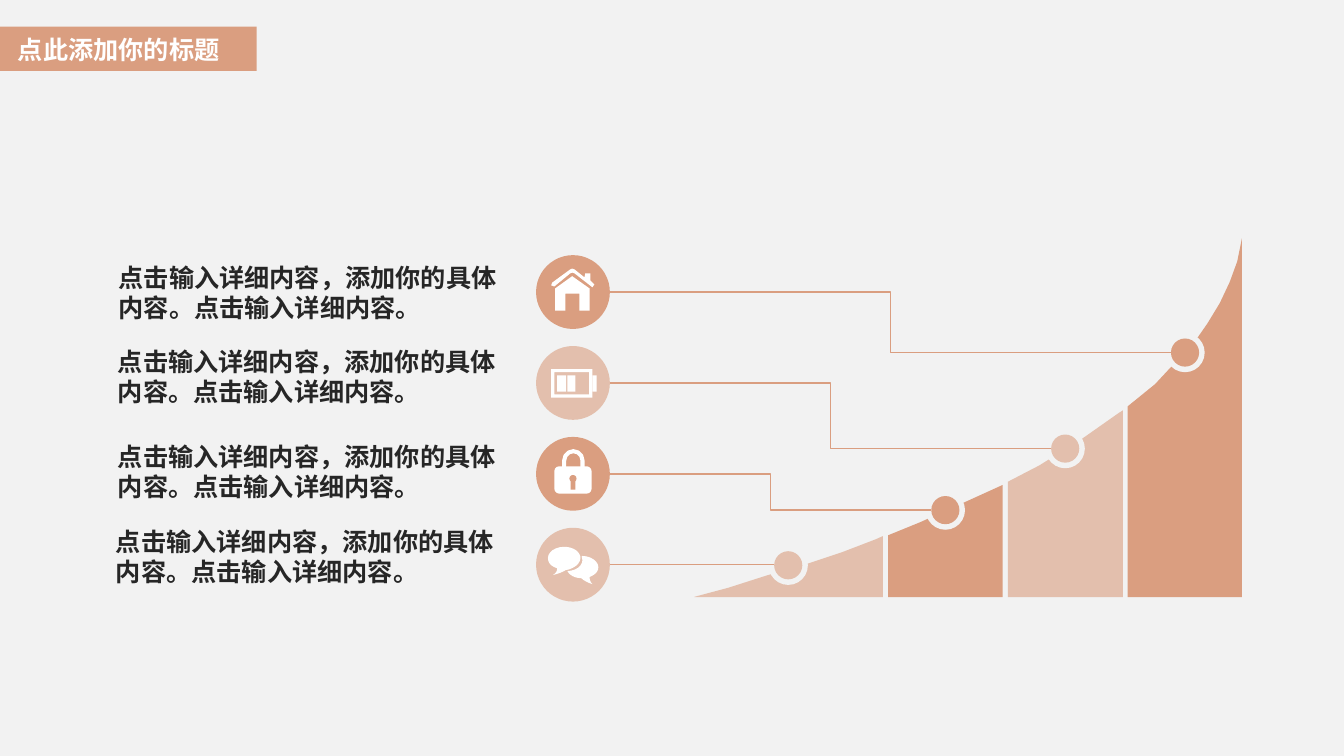
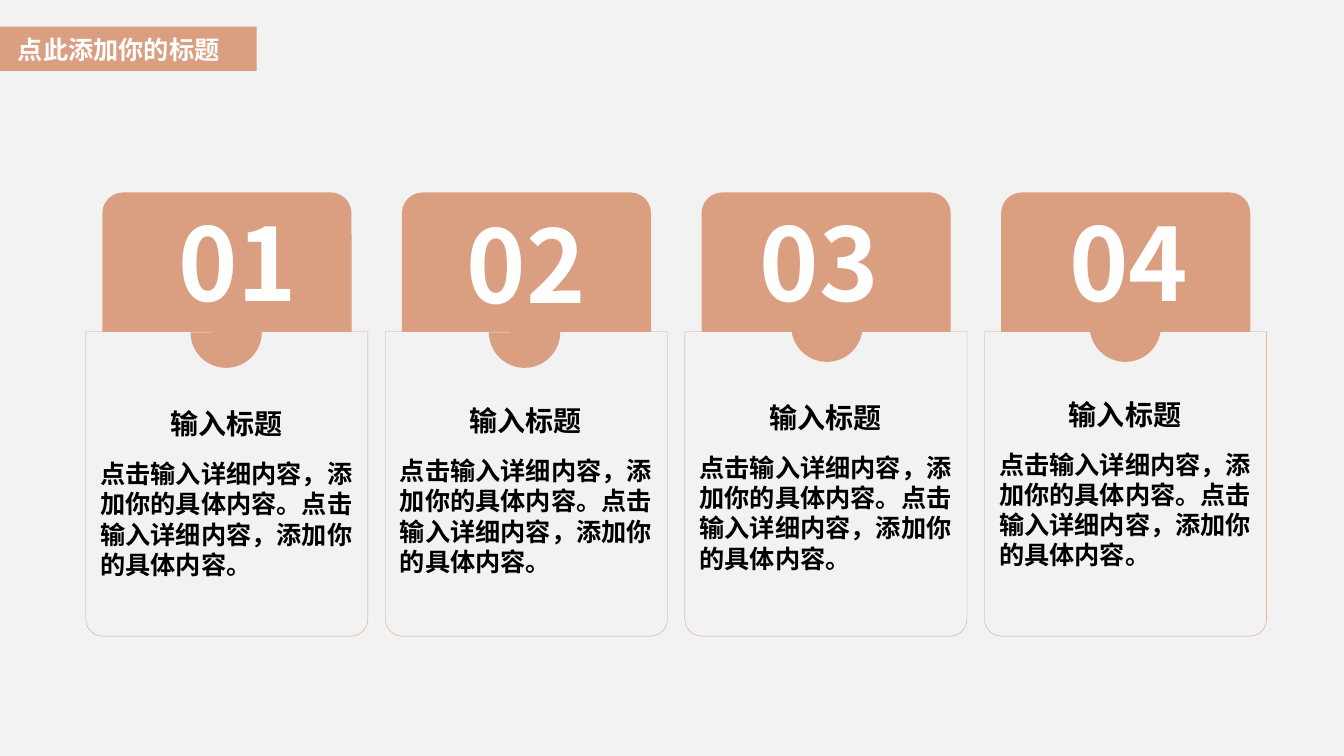
import pptx
import pptx.util
import pptx.dml.color
import pptx.enum.shapes
import pptx.enum.text
import pptx.oxml
import pptx.oxml.ns
from pptx.util import Cm

RGBColor = pptx.dml.color.RGBColor
SHAPE = pptx.enum.shapes.MSO_SHAPE
CONNECTOR = pptx.enum.shapes.MSO_CONNECTOR
ALIGN = pptx.enum.text.PP_ALIGN

CLAY = RGBColor(0xDA, 0x9E, 0x80)
PAPER = RGBColor(0xF2, 0xF2, 0xF2)
WHITE = RGBColor(0xFF, 0xFF, 0xFF)
INK = RGBColor(0x26, 0x26, 0x26)
BLACK = RGBColor(0, 0, 0)
FONT = "Noto Sans CJK JP"
PALE_ALPHA = 60

TITLE = "点此添加你的标题"
STEP_TEXT = "点击输入详细内容，添加你的具体内容。点击输入详细内容。"
CARD_TITLE = "输入标题"
CARD_TEXT = "点击输入详细内容，添加你的具体内容。点击输入详细内容，添加你的具体内容。"

DISC_LEFT, DISC_TOP, DISC_SIZE, DISC_PITCH = 13.51, 6.43, 1.86, 2.29
MARKER_SIZE, HALO_GAP = 0.71, 0.14
GROWTH_BASE = 15.05
GROWTH_BANDS = [
    ([(17.5, 15.04), (18.36, 14.81), (19.33, 14.5), (20.37, 14.2),
      (21.21, 13.92), (22.07, 13.59), (22.25, 13.51)], PALE_ALPHA),
    ([(22.38, 13.49), (23.19, 13.16), (24.28, 12.67), (25.27, 12.22)], 100),
    ([(25.4, 12.14), (26.19, 11.73), (27.28, 11.05), (28.19, 10.41),
      (28.3, 10.34)], PALE_ALPHA),
    ([(28.42, 10.24), (29.11, 9.68), (29.51, 9.25), (30.18, 8.51),
      (30.43, 8.15), (30.74, 7.64), (30.99, 7.11), (31.18, 6.59),
      (31.3, 6)], 100),
]

ROOF = [(0.41, 0.69), (0.86, 0.36), (0.91, 0.34), (0.97, 0.36), (1.22, 0.56),
        (1.24, 0.46), (1.37, 0.46), (1.37, 0.64), (1.47, 0.74), (1.42, 0.81),
        (0.97, 0.46), (0.91, 0.44), (0.86, 0.46), (0.46, 0.79), (0.38, 0.76)]
WALLS = [(0.91, 0.53), (1.35, 0.84), (1.35, 1.4), (1.09, 1.4), (1.09, 0.97),
         (0.74, 0.97), (0.74, 1.4), (0.48, 1.4), (0.48, 0.84)]
BACK_BUBBLE = [
    (1.57, 0.99), (1.57, 0.84), (1.37, 0.71), (1.17, 0.71),
    (1.14, 0.71), (1.15, 0.75), (1.17, 0.81),
    (1.17, 0.97), (0.99, 1.09), (0.79, 1.09),
    (0.84, 1.19), (0.97, 1.27), (1.14, 1.27),
    (1.24, 1.37), (1.42, 1.42), (1.42, 1.42),
    (1.35, 1.35), (1.35, 1.27), (1.35, 1.24),
    (1.47, 1.19), (1.57, 1.12), (1.57, 0.99)]
FRONT_BUBBLE = [
    (1.09, 0.66), (1.04, 0.56), (0.89, 0.48), (0.71, 0.48),
    (0.48, 0.48), (0.3, 0.61), (0.3, 0.76),
    (0.3, 0.89), (0.38, 0.97), (0.53, 1.02),
    (0.53, 1.07), (0.53, 1.12), (0.43, 1.19),
    (0.43, 1.19), (0.64, 1.14), (0.74, 1.07),
    (0.94, 1.04), (1.12, 0.91), (1.12, 0.76),
    (1.12, 0.74), (1.12, 0.71), (1.09, 0.66)]


def paint(shape, fill, alpha=100, line=None, line_width=0.25):
    shape.shadow.inherit = False
    if fill is None:
        shape.fill.background()
    else:
        shape.fill.solid()
        shape.fill.fore_color.rgb = fill
        if alpha < 100:
            color = shape.fill._xPr.find(".//" + pptx.oxml.ns.qn("a:srgbClr"))
            opacity = pptx.oxml.parse_xml(
                "<a:alpha %s val='%d'/>" % (pptx.oxml.ns.nsdecls("a"), alpha * 1000))
            color.append(opacity)
    if line is None:
        shape.line.fill.background()
    else:
        shape.line.color.rgb = line
        shape.line.width = pptx.util.Pt(line_width)
    return shape


def add_preset(slide, preset, left, top, width, height, fill, adjust=(), **style):
    shape = slide.shapes.add_shape(preset, Cm(left), Cm(top), Cm(width), Cm(height))
    for index, value in enumerate(adjust):
        shape.adjustments[index] = value
    return paint(shape, fill, **style)


def add_outline(slide, points, fill, left=0, top=0, alpha=100):
    corners = [(Cm(left + x), Cm(top + y)) for x, y in points]
    builder = slide.shapes.build_freeform(*corners[0], scale=1.0)
    builder.add_line_segments(corners[1:], close=True)
    return paint(builder.convert_to_shape(), fill, alpha)


def smooth_curve(controls, steps=6):
    points = [controls[0]]
    for first in range(0, len(controls) - 1, 3):
        for step in range(1, steps + 1):
            t = step / steps
            weights = ((1 - t) ** 3, 3 * t * (1 - t) ** 2, 3 * t * t * (1 - t), t ** 3)
            points.append(tuple(
                sum(w * p[axis] for w, p in zip(weights, controls[first:first + 4]))
                for axis in (0, 1)))
    return points


def add_text(slide, text, left, top, width, height, size=18, color=BLACK,
             align=ALIGN.LEFT):
    box = slide.shapes.add_textbox(Cm(left), Cm(top), Cm(width), Cm(height))
    frame = box.text_frame
    frame.word_wrap = True
    frame.auto_size = pptx.enum.text.MSO_AUTO_SIZE.SHAPE_TO_FIT_TEXT
    paragraph = frame.paragraphs[0]
    paragraph.alignment = align
    run = paragraph.add_run()
    run.text = text
    run.font.size = pptx.util.Pt(size)
    run.font.bold = True
    run.font.name = FONT
    run.font.color.rgb = color
    east_asian = pptx.oxml.parse_xml(
        "<a:ea %s typeface='%s'/>" % (pptx.oxml.ns.nsdecls("a"), FONT))
    run.font._element.append(east_asian)


def add_leader(slide, kind, start_x, start_y, end_x, end_y):
    leader = slide.shapes.add_connector(
        kind, Cm(start_x), Cm(start_y), Cm(end_x), Cm(end_y))
    leader.line.color.rgb = CLAY
    leader.line.width = pptx.util.Pt(1)
    leader._element.spPr.append(
        pptx.oxml.parse_xml("<a:effectLst %s/>" % pptx.oxml.ns.nsdecls("a")))


def draw_house(slide, left, top):
    for part in (WALLS, ROOF):
        add_outline(slide, part, WHITE, left, top)


def draw_battery(slide, left, top):
    add_preset(slide, SHAPE.FRAME, left + 0.38, top + 0.58, 1.04, 0.72, WHITE, [0.11])
    for offset, width in ((0.53, 0.23), (0.79, 0.2), (1.42, 0.11)):
        add_preset(slide, SHAPE.RECTANGLE, left + offset, top + 0.74, width, 0.41, WHITE)


def draw_lock(slide, left, top):
    add_preset(slide, SHAPE.ROUNDED_RECTANGLE, left + 0.71, top + 0.36, 0.46, 0.7,
               None, [0.5], line=WHITE, line_width=2.9)
    add_preset(slide, SHAPE.ROUNDED_RECTANGLE, left + 0.46, top + 0.74, 0.94, 0.69,
               WHITE, [0.18])
    add_preset(slide, SHAPE.OVAL, left + 0.84, top + 0.96, 0.18, 0.18, CLAY)
    add_preset(slide, SHAPE.RECTANGLE, left + 0.87, top + 1.05, 0.12, 0.28, CLAY)


def draw_chat(slide, left, top):
    for bubble in (BACK_BUBBLE, FRONT_BUBBLE):
        add_outline(slide, smooth_curve(bubble), WHITE, left, top)


def new_slide(deck):
    slide = deck.slides.add_slide(deck.slide_layouts[6])
    slide.background.fill.solid()
    slide.background.fill.fore_color.rgb = PAPER
    add_preset(slide, SHAPE.RECTANGLE, 0, 0.67, 6.47, 1.12, CLAY)
    add_text(slide, TITLE, 0.2, 0.74, 6.05, 1.03, color=WHITE, align=ALIGN.JUSTIFY)
    return slide


def add_step(slide, index, draw_icon, alpha, marker, text_at):
    disc_top = DISC_TOP + index * DISC_PITCH
    disc_middle = disc_top + DISC_SIZE / 2
    marker_left, marker_top = marker
    halo_size = MARKER_SIZE + 2 * HALO_GAP
    add_preset(slide, SHAPE.OVAL, marker_left - HALO_GAP, marker_top - HALO_GAP,
               halo_size, halo_size, PAPER)
    is_level = abs(marker_top + MARKER_SIZE / 2 - disc_middle) < 0.1
    add_leader(slide, CONNECTOR.STRAIGHT if is_level else CONNECTOR.ELBOW,
               DISC_LEFT + DISC_SIZE, disc_middle, marker_left,
               disc_middle if is_level else marker_top + MARKER_SIZE / 2)
    add_preset(slide, SHAPE.OVAL, marker_left, marker_top, MARKER_SIZE, MARKER_SIZE,
               CLAY, alpha=alpha)
    add_preset(slide, SHAPE.OVAL, DISC_LEFT, disc_top, DISC_SIZE, DISC_SIZE,
               CLAY, alpha=alpha)
    draw_icon(slide, DISC_LEFT, disc_top)
    add_text(slide, STEP_TEXT, *text_at, 10.26, 1.8, color=INK)


def build_growth_slide(deck):
    slide = new_slide(deck)
    for crest, alpha in GROWTH_BANDS:
        base = [(crest[-1][0], GROWTH_BASE), (crest[0][0], GROWTH_BASE)]
        add_outline(slide, crest + base, CLAY, alpha=alpha)
    steps = [
        (draw_house, 100, (29.51, 8.53), (2.74, 6.48)),
        (draw_battery, PALE_ALPHA, (26.49, 10.95), (2.72, 8.59)),
        (draw_lock, 100, (23.47, 12.5), (2.72, 11)),
        (draw_chat, PALE_ALPHA, (19.51, 13.89), (2.67, 13.13)),
    ]
    for index, step in enumerate(steps):
        add_step(slide, index, *step)


def add_card(slide, index, number_at, notch_at):
    left = 2.16 + index * 7.55
    rise = index * 0.08
    add_preset(slide, SHAPE.ROUNDED_RECTANGLE, left + 0.42, 4.85, 6.28, 5.79,
               CLAY, [0.09])
    pocket = add_preset(slide, SHAPE.ROUND_2_SAME_RECTANGLE, left, 8.36, 7.11, 7.67,
                        PAPER, [0.06, 0], line=CLAY)
    pocket.rotation = 180
    add_text(slide, CARD_TITLE, left + 1.88, 10.13 - rise, 3.48, 1.11, size=20)
    add_text(slide, CARD_TEXT, left + 0.12, 11.43 - rise, 6.91, 3.33)
    add_text(slide, f"{index + 1:02d}", *number_at, 4, 3.33, size=72, color=WHITE,
             align=ALIGN.JUSTIFY)
    add_preset(slide, SHAPE.PIE, *notch_at, 1.8, 1.8, CLAY, [0, 107.69])


def build_cards_slide(deck):
    slide = new_slide(deck)
    cards = [
        ((4.24, 4.93), (4.8, 7.47)),
        ((11.51, 4.98), (12.32, 7.47)),
        ((18.9, 4.93), (19.94, 7.32)),
        ((26.7, 4.93), (27.46, 7.32)),
    ]
    for index, card in enumerate(cards):
        add_card(slide, index, *card)


def main():
    deck = pptx.Presentation()
    deck.slide_width, deck.slide_height = Cm(33.87), Cm(19.05)
    build_growth_slide(deck)
    build_cards_slide(deck)
    deck.save("out.pptx")


if __name__ == "__main__":
    main()
